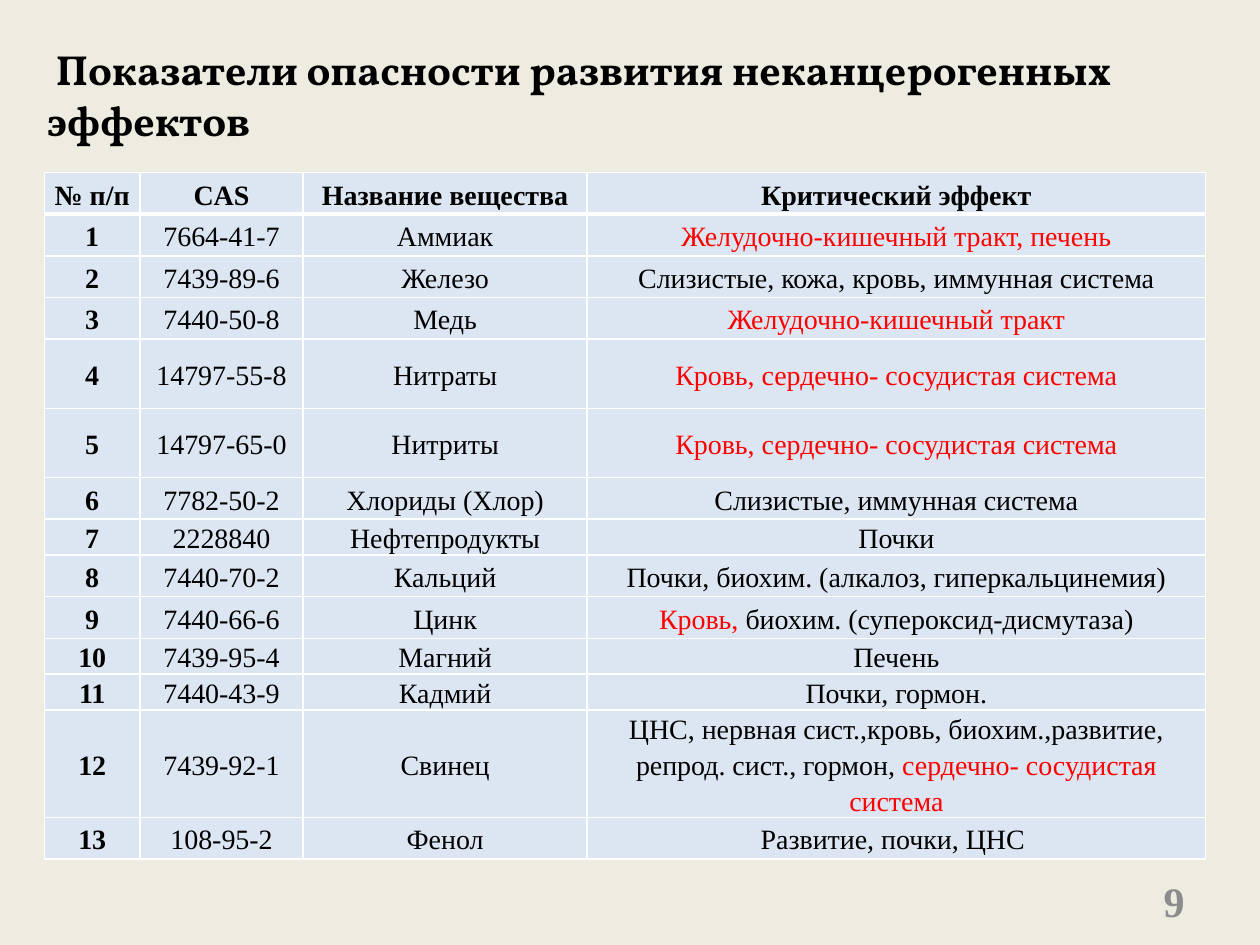
from lxml.etree import SubElement
from pptx import Presentation
from pptx.dml.color import RGBColor
from pptx.enum.text import MSO_ANCHOR, PP_ALIGN
from pptx.oxml.ns import qn
from pptx.util import Pt

SERIF = "Times New Roman"
COLS = [54.6, 93.2, 162.4, 353.3]
ROWS = [23.8] * 4 + [39.6] * 2 + [23.8, 18.7] + [23.8] * 2 + [18.7] * 2 + [60.5, 23.8]
HEAD = ("№ п/п", "CAS", "Название вещества", "Критический эффект")
ITEMS = [
    ("7664-41-7", "Аммиак", "*Желудочно-кишечный тракт, печень"),
    ("7439-89-6", "Железо", "Слизистые, кожа, кровь, иммунная система"),
    ("7440-50-8", "Медь", "*Желудочно-кишечный тракт"),
    ("14797-55-8", "Нитраты", "*Кровь, сердечно- сосудистая система"),
    ("14797-65-0", "Нитриты", "*Кровь, сердечно- сосудистая система"),
    ("7782-50-2", "Хлориды (Хлор)", "Слизистые, иммунная система"),
    ("2228840", "Нефтепродукты", "Почки"),
    ("7440-70-2", "Кальций", "Почки, биохим. (алкалоз, гиперкальцинемия)"),
    ("7440-66-6", "Цинк", "*Кровь, *биохим. (супероксид-дисмутаза)"),
    ("7439-95-4", "Магний", "Печень"),
    ("7440-43-9", "Кадмий", "Почки, гормон."),
    ("7439-92-1", "Свинец", "ЦНС, нервная сист.,кровь, биохим.,развитие, "
     "репрод. сист., гормон, *сердечно- сосудистая система"),
    ("108-95-2", "Фенол", "Развитие, почки, ЦНС "),
]


def tint(code):
    """Turn a hex string into a colour."""
    return RGBColor.from_string(code)


def add_run(para, text, size, face, code, bold):
    """Add one styled run to a paragraph."""
    run = para.add_run()
    run.text = text
    font = run.font
    font.size, font.name, font.bold = Pt(size), face, bold
    font.color.rgb = tint(code)


def add_edge(cell, side, width):
    """Draw a white border on one side of a cell."""
    props = cell._tc.get_or_add_tcPr()
    line = SubElement(props, qn("a:ln" + side), w=str(Pt(width)))
    fill = SubElement(line, qn("a:solidFill"))
    SubElement(fill, qn("a:srgbClr"), val="FFFFFF")


def fill_cell(cell, text, bold, top, base):
    """Style a cell and write its text, with red after each odd star."""
    for side, width in zip("LRTB", (1, 1, top, base)):
        add_edge(cell, side, width)
    cell.fill.solid()
    cell.fill.fore_color.rgb = tint("DCE6F2")
    cell.margin_left = cell.margin_right = Pt(3.6)
    cell.margin_top = cell.margin_bottom = 0
    cell.vertical_anchor = MSO_ANCHOR.MIDDLE
    para = cell.text_frame.paragraphs[0]
    para.alignment, para.line_spacing = PP_ALIGN.CENTER, 1.15
    for pos, part in enumerate(text.split("*")):
        if part:
            add_run(para, part, 16, SERIF, "FF0000" if pos % 2 else "000000", bold)


def add_grid(slide, left, top):
    """Place the table of substances."""
    rows = [HEAD] + [(str(num), *item) for num, item in enumerate(ITEMS, 1)]
    table = slide.shapes.add_table(len(rows), len(COLS), Pt(left), Pt(top),
                                   Pt(sum(COLS)), Pt(sum(ROWS))).table
    table.horz_banding = False
    for col, width in zip(table.columns, COLS):
        col.width = Pt(width)
    for r, (row, height) in enumerate(zip(rows, ROWS)):
        table.rows[r].height = Pt(height)
        for c, text in enumerate(row):
            fill_cell(table.cell(r, c), text, r == 0 or c == 0,
                      3 if r == 1 else 1, 3 if r == 0 else 1)


def add_label(slide, box, text, face, code, align):
    """Place a bold line of text in a box."""
    frame = slide.shapes.add_textbox(*map(Pt, box)).text_frame
    frame.word_wrap = True
    frame.vertical_anchor = MSO_ANCHOR.MIDDLE
    para = frame.paragraphs[0]
    para.alignment = align
    add_run(para, text, 24, face, code, True)


def main():
    """Build the slide and save it."""
    deck = Presentation()
    deck.slide_width, deck.slide_height = Pt(720), Pt(540)
    slide = deck.slides.add_slide(deck.slide_layouts[6])
    slide.background.fill.solid()
    slide.background.fill.fore_color.rgb = tint("EEECE1")
    add_grid(slide, 25.4, 98.6)
    add_label(slide, (20, 21, 666, 65.5),
              " Показатели опасности развития неканцерогенных эффектов",
              "Vollkorn", "000000", PP_ALIGN.LEFT)
    add_label(slide, (516, 500.5, 168, 28.8), "9", SERIF, "8C8C8C", PP_ALIGN.RIGHT)
    deck.save("out.pptx")


if __name__ == "__main__":
    main()
